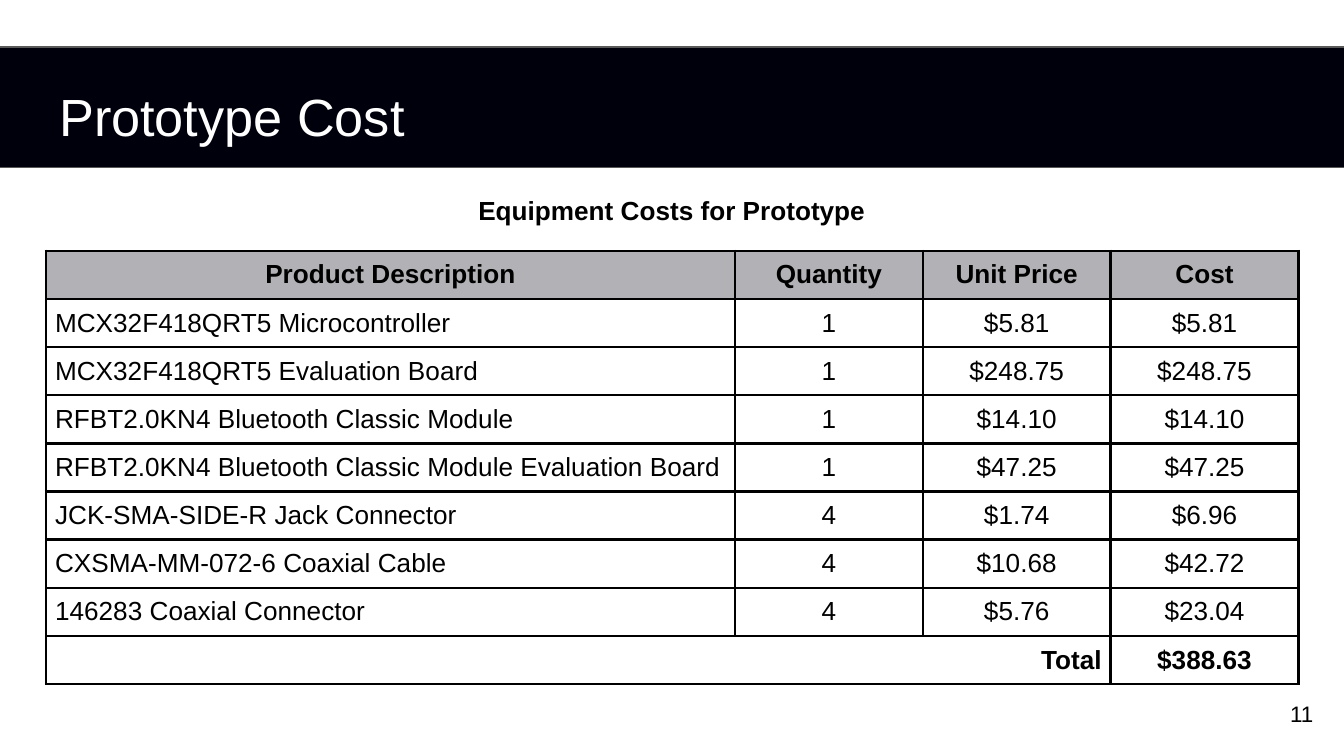
"""Build the prototype cost slide with its equipment table."""
import dataclasses

import lxml.etree
import pptx
import pptx.dml.color
import pptx.enum.shapes
import pptx.enum.text
import pptx.oxml.ns
import pptx.util

Cm = pptx.util.Cm
Pt = pptx.util.Pt
RGB = pptx.dml.color.RGBColor.from_string
ALIGN = pptx.enum.text.PP_ALIGN
ANCHOR = pptx.enum.text.MSO_ANCHOR


@dataclasses.dataclass(frozen=True)
class Theme:
    font: str = "Arial"
    ink: str = "000000"
    paper: str = "FFFFFF"
    band: str = "00000D"
    band_edge: str = "595959"
    header: str = "B2B2B6"
    title_size: int = 28
    table_size: int = 14
    number_size: int = 12
    border: float = 1.5


theme = Theme()


def write(frame, text, size, color, align, bold=False):
    frame.text = text
    frame.word_wrap = True
    paragraph = frame.paragraphs[0]
    paragraph.alignment = align
    for run in paragraph.runs:
        run.font.name = theme.font
        run.font.size = Pt(size)
        run.font.bold = bold
        run.font.color.rgb = RGB(color)


def outline(cell):
    properties = cell._tc.get_or_add_tcPr()
    for position, side in enumerate(("lnL", "lnR", "lnT", "lnB")):
        line = lxml.etree.Element(pptx.oxml.ns.qn(f"a:{side}"), w=str(Pt(theme.border)))
        fill = lxml.etree.SubElement(line, pptx.oxml.ns.qn("a:solidFill"))
        lxml.etree.SubElement(fill, pptx.oxml.ns.qn("a:srgbClr"), val=theme.ink)
        properties.insert(position, line)


deck = pptx.Presentation()
deck.slide_width = Cm(25.4)
deck.slide_height = Cm(14.29)
slide = deck.slides.add_slide(deck.slide_layouts[5])
slide.background.fill.solid()
slide.background.fill.fore_color.rgb = RGB(theme.paper)

title = slide.shapes.title
title.left, title.top, title.width, title.height = Cm(0.87), Cm(1.24), Cm(23.66), Cm(1.6)
write(title.text_frame, "Prototype Cost", theme.title_size, theme.paper, ALIGN.LEFT)
title.text_frame.auto_size = pptx.enum.text.MSO_AUTO_SIZE.NONE
title.text_frame.vertical_anchor = ANCHOR.TOP
title.text_frame.margin_left = title.text_frame.margin_right = Cm(0.25)
title.text_frame.margin_top = Cm(0.36)
title.text_frame.margin_bottom = 0

band = slide.shapes.add_shape(
    pptx.enum.shapes.MSO_SHAPE.RECTANGLE, Cm(-0.03), Cm(0.89), Cm(25.46), Cm(2.28))
band.shadow.inherit = False
band.fill.solid()
band.fill.fore_color.rgb = RGB(theme.band)
band.line.color.rgb = RGB(theme.band_edge)
band.line.width = Pt(0.75)
title._element.addprevious(band._element)

costs = [
    ("Product Description", "Quantity", "Unit Price", "Cost"),
    ("MCX32F418QRT5 Microcontroller", "1", "$5.81", "$5.81"),
    ("MCX32F418QRT5 Evaluation Board", "1", "$248.75", "$248.75"),
    ("RFBT2.0KN4 Bluetooth Classic Module", "1", "$14.10", "$14.10"),
    ("RFBT2.0KN4 Bluetooth Classic Module Evaluation Board", "1", "$47.25", "$47.25"),
    ("JCK-SMA-SIDE-R Jack Connector", "4", "$1.74", "$6.96"),
    ("CXSMA-MM-072-6 Coaxial Cable", "4", "$10.68", "$42.72"),
    ("146283 Coaxial Connector", "4", "$5.76", "$23.04"),
    ("Total", "", "", "$388.63"),
]
column_widths = (13.02, 3.55, 3.55, 3.55)
row_height = 0.91
last = len(costs) - 1

cost_table = slide.shapes.add_table(
    len(costs), len(column_widths), Cm(0.87), Cm(4.74),
    Cm(sum(column_widths)), Cm(row_height * len(costs))).table
cost_table.first_row = False
cost_table.horz_banding = False
for column, width in zip(cost_table.columns, column_widths):
    column.width = Cm(width)
for row in cost_table.rows:
    row.height = Cm(row_height)

for r, entries in enumerate(costs):
    for c, entry in enumerate(entries):
        cell = cost_table.cell(r, c)
        align = ALIGN.CENTER
        if c == 0 and r > 0:
            align = ALIGN.RIGHT if r == last else ALIGN.LEFT
        write(cell.text_frame, entry, theme.table_size, theme.ink, align, r in (0, last))
        cell.vertical_anchor = ANCHOR.MIDDLE
        cell.margin_left = cell.margin_right = Cm(0.17)
        cell.margin_top = cell.margin_bottom = Cm(0.17)
        if r == 0:
            cell.fill.solid()
            cell.fill.fore_color.rgb = RGB(theme.header)
        else:
            cell.fill.background()
        outline(cell)
cost_table.cell(last, 0).merge(cost_table.cell(last, 2))

labels = [
    ("11", (23.55, 12.95, 1.52, 1.09), theme.number_size, ALIGN.RIGHT, False),
    ("Equipment Costs for Prototype", (0.87, 3.43, 23.66, 1.09),
     theme.table_size, ALIGN.CENTER, True),
]
for text, place, size, align, bold in labels:
    label = slide.shapes.add_textbox(*map(Cm, place)).text_frame
    write(label, text, size, theme.ink, align, bold)
    label.vertical_anchor = ANCHOR.MIDDLE
    label.margin_left = label.margin_right = Cm(0.25)
    label.margin_top = label.margin_bottom = Cm(0.25)

deck.save("out.pptx")
